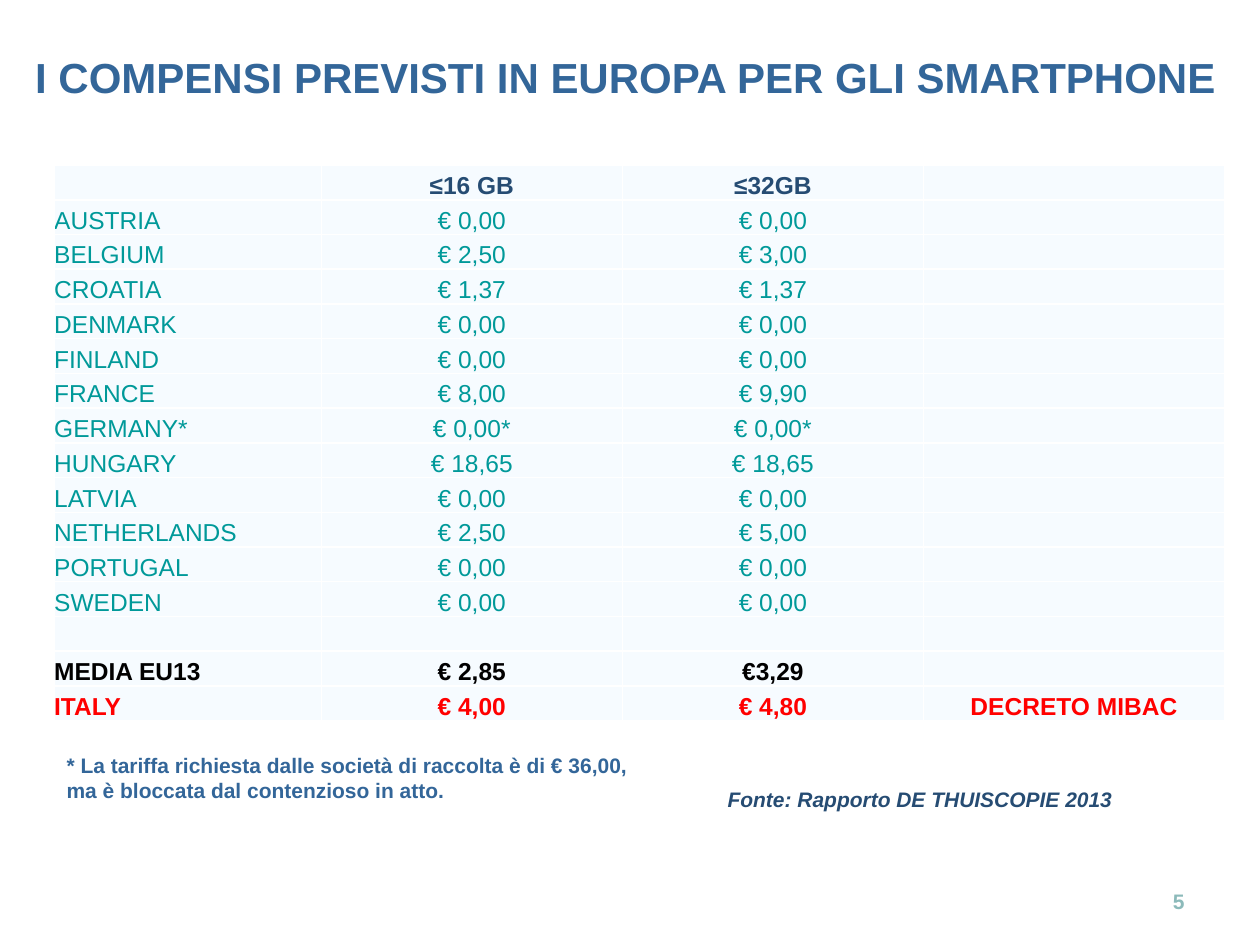
from typing import NamedTuple

from lxml import etree
from pptx import Presentation
from pptx.dml.color import RGBColor
from pptx.enum.text import MSO_ANCHOR, PP_ALIGN
from pptx.oxml.ns import qn
from pptx.util import Inches, Pt

LEFT, CENTER, RIGHT = PP_ALIGN.LEFT, PP_ALIGN.CENTER, PP_ALIGN.RIGHT
JUSTIFY = PP_ALIGN.JUSTIFY
TOP, MIDDLE, BOTTOM = MSO_ANCHOR.TOP, MSO_ANCHOR.MIDDLE, MSO_ANCHOR.BOTTOM

BLUE = RGBColor(0x33, 0x66, 0x99)
NAVY = RGBColor(0x26, 0x4C, 0x73)
TEAL = RGBColor(0x00, 0x99, 0x99)
BLACK = RGBColor(0x01, 0x00, 0x00)
RED = RGBColor(0xFF, 0x00, 0x00)
SAGE = RGBColor(0x8C, 0xBA, 0xBA)
PALE = RGBColor(0xF6, 0xFB, 0xFF)
FONT = "Arial"
CELL_SIZE = 14


class Label(NamedTuple):
    text: str
    left: float
    top: float
    width: float
    height: float
    color: RGBColor
    size: int = 12
    align: PP_ALIGN = LEFT
    anchor: MSO_ANCHOR = TOP
    italic: bool = False
    wrap: bool = True


class Row(NamedTuple):
    name: str
    small: str
    large: str
    note: str = ""
    color: RGBColor = TEAL
    bold: bool = False
    align: PP_ALIGN = LEFT


LABELS = [
    Label("5", 7.17, 6.95, 2.33, 0.4, SAGE, align=RIGHT, anchor=MIDDLE),
    Label("I COMPENSI PREVISTI IN EUROPA PER GLI SMARTPHONE",
          0.12, 0.36, 9.69, 0.5, BLUE, size=24, align=CENTER),
    Label(" Fonte: Rapporto DE THUISCOPIE 2013",
          5.63, 6.19, 3.34, 0.3, NAVY, italic=True, wrap=False),
    Label("* La tariffa richiesta dalle società di raccolta è di € 36,00, "
          "ma è bloccata dal contenzioso in atto.",
          0.43, 5.92, 4.72, 0.5, BLUE),
]

ROWS = [
    Row("", "≤16 GB", "≤32GB", color=NAVY, bold=True),
    Row("AUSTRIA", "€ 0,00", "€ 0,00"),
    Row("BELGIUM", "€ 2,50", "€ 3,00"),
    Row("CROATIA", "€ 1,37", "€ 1,37"),
    Row("DENMARK", "€ 0,00", "€ 0,00"),
    Row("FINLAND", "€ 0,00", "€ 0,00"),
    Row("FRANCE", "€ 8,00", "€ 9,90"),
    Row("GERMANY*", "€ 0,00*", "€ 0,00*"),
    Row("HUNGARY", "€ 18,65", "€ 18,65"),
    Row("LATVIA", "€ 0,00", "€ 0,00"),
    Row("NETHERLANDS", "€ 2,50", "€ 5,00"),
    Row("PORTUGAL", "€ 0,00", "€ 0,00"),
    Row("SWEDEN", "€ 0,00", "€ 0,00"),
    Row("", "", ""),
    Row("MEDIA EU13", "€ 2,85", "€3,29", color=BLACK, bold=True, align=JUSTIFY),
    Row("ITALY", "€ 4,00", "€ 4,80", "DECRETO MIBAC", RED, True),
]
WIDTHS = [2.12, 2.39, 2.39, 2.39]
HEIGHT = 4.41


def style(para, size: int, color: RGBColor, bold: bool, italic: bool = False) -> None:
    for run in para.runs:
        font = run.font
        font.name, font.size = FONT, Pt(size)
        font.bold, font.italic = bold, italic
        font.color.rgb = color


def add_label(slide, label: Label) -> None:
    box = slide.shapes.add_textbox(Inches(label.left), Inches(label.top),
                                   Inches(label.width), Inches(label.height))
    frame = box.text_frame
    frame.text = label.text
    frame.word_wrap = label.wrap
    frame.vertical_anchor = label.anchor
    para = frame.paragraphs[0]
    para.alignment = label.align
    style(para, label.size, label.color, True, label.italic)


def add_edges(cell) -> None:
    """Draw a thin white line on all four sides."""
    props = cell._tc.get_or_add_tcPr()
    for pos, tag in enumerate(("a:lnL", "a:lnR", "a:lnT", "a:lnB")):
        line = etree.Element(qn(tag), w=str(Pt(1)))
        fill = etree.SubElement(line, qn("a:solidFill"))
        etree.SubElement(fill, qn("a:srgbClr"), val="FFFFFF")
        props.insert(pos, line)


def fill_cell(cell, text: str, row: Row, align: PP_ALIGN) -> None:
    cell.fill.solid()
    cell.fill.fore_color.rgb = PALE
    cell.margin_left = cell.margin_right = 0
    cell.margin_top = cell.margin_bottom = 0
    cell.vertical_anchor = BOTTOM
    add_edges(cell)
    if text:
        cell.text_frame.text = text
    para = cell.text_frame.paragraphs[0]
    para.alignment = align
    style(para, CELL_SIZE, row.color, row.bold)
    if not text:
        # Keep empty cells from stretching the row
        etree.SubElement(para._p, qn("a:endParaRPr"), sz=str(CELL_SIZE * 100))


def add_rates(slide) -> None:
    table = slide.shapes.add_table(
        len(ROWS), len(WIDTHS), Inches(0.43), Inches(1.31),
        Inches(sum(WIDTHS)), Inches(HEIGHT)).table
    table.first_row = table.horz_banding = False
    for col, width in zip(table.columns, WIDTHS):
        col.width = Inches(width)
    for r, row in enumerate(ROWS):
        table.rows[r].height = Inches(HEIGHT / len(ROWS))
        for c, text in enumerate((row.name, row.small, row.large, row.note)):
            fill_cell(table.cell(r, c), text, row, CENTER if c else row.align)


def main() -> None:
    deck = Presentation()
    deck.slide_width, deck.slide_height = Inches(10), Inches(7.5)
    slide = deck.slides.add_slide(deck.slide_layouts[6])

    # Table of rates
    add_rates(slide)

    # Title, notes and page number
    for label in LABELS:
        add_label(slide, label)

    deck.save("out.pptx")


if __name__ == "__main__":
    main()
